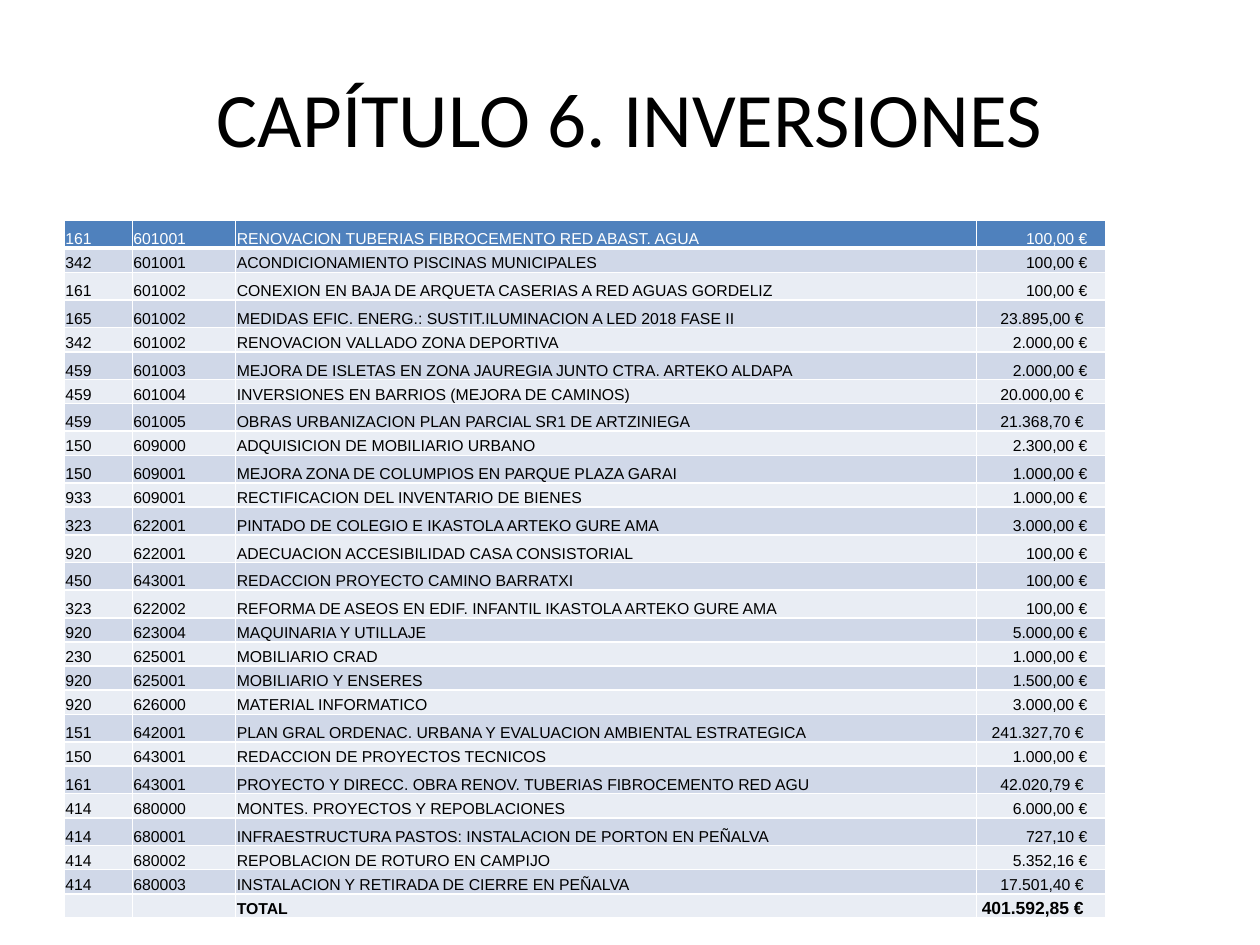
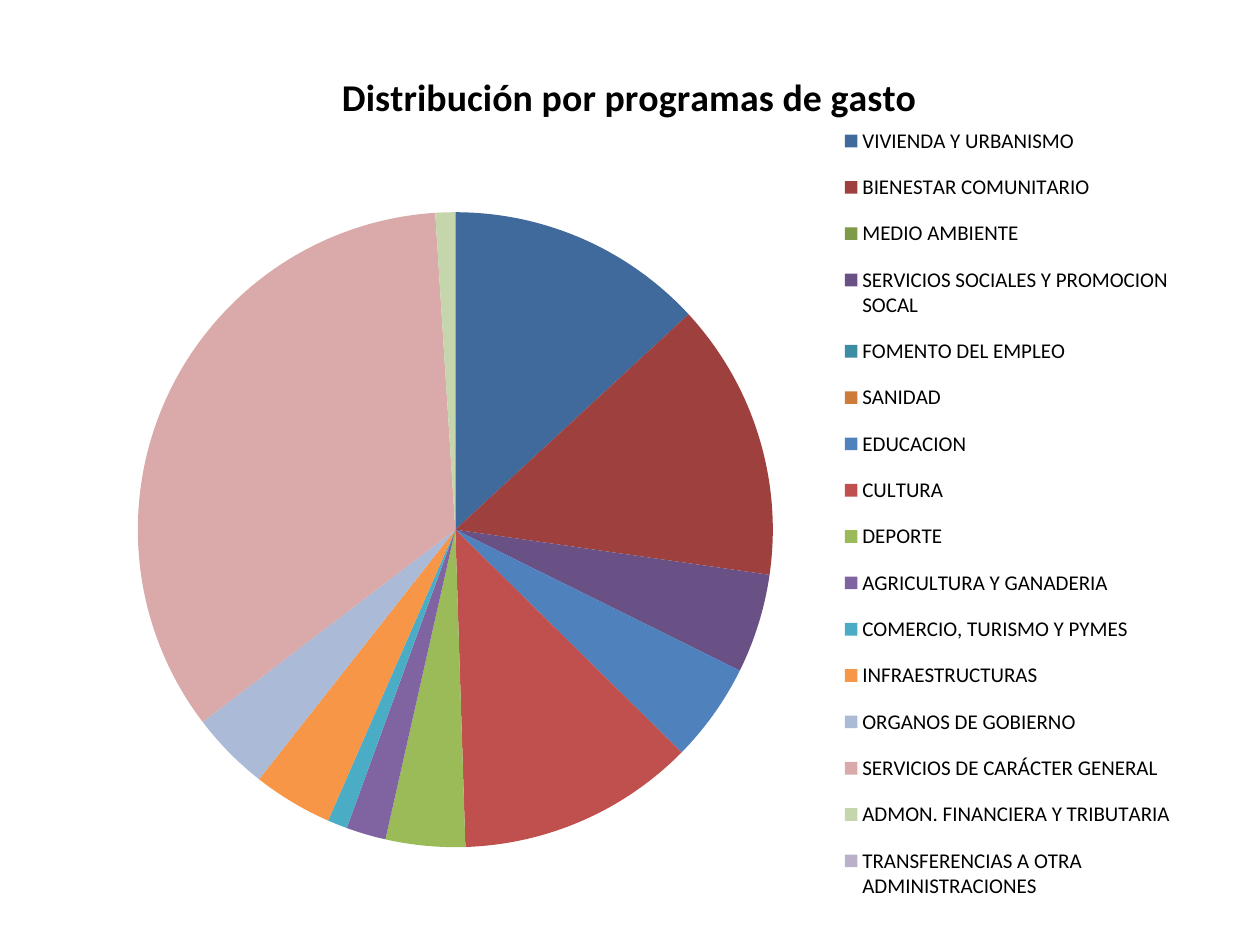
"""Builds a table of municipal investments and a pie of spending by programme."""
from lxml.etree import SubElement
from pptx import Presentation
from pptx.chart.data import CategoryChartData
from pptx.dml.color import RGBColor
from pptx.enum.chart import XL_CHART_TYPE, XL_LEGEND_POSITION
from pptx.enum.text import MSO_ANCHOR, PP_ALIGN
from pptx.oxml import parse_xml
from pptx.oxml.ns import nsdecls, qn
from pptx.util import Inches, Pt

WIDE, HIGH = 10, 7.5
EDGE, SPAN = WIDE * 0.05, WIDE * 0.9
HEAD, BODY = "Calibri", "Arial"
INK, PAPER = "000000", "FFFFFF"
BLUE, BANDS = "4F81BD", ("E9EDF4", "D0D8E8")

TITLE = "CAPÍTULO 6. INVERSIONES"
COLS = (0.54, 0.82, 5.88, 1.03)
DEPTH, TALL = 5.54, 0.22
DEEP = {0, 2, 3, 5, 7, 9, 11, 12, 13, 14, 19, 21, 23}
ROWS = [
    ("161", "601001", "RENOVACION TUBERIAS FIBROCEMENTO RED ABAST. AGUA", "100,00 €"),
    ("342", "601001", "ACONDICIONAMIENTO PISCINAS MUNICIPALES", "100,00 €"),
    ("161", "601002", "CONEXION EN BAJA DE ARQUETA CASERIAS A RED AGUAS GORDELIZ", "100,00 €"),
    ("165", "601002", "MEDIDAS EFIC. ENERG.: SUSTIT.ILUMINACION A LED 2018 FASE II", "23.895,00 €"),
    ("342", "601002", "RENOVACION VALLADO ZONA DEPORTIVA", "2.000,00 €"),
    ("459", "601003", "MEJORA DE ISLETAS EN ZONA JAUREGIA JUNTO CTRA. ARTEKO ALDAPA", "2.000,00 €"),
    ("459", "601004", "INVERSIONES EN BARRIOS (MEJORA DE CAMINOS)", "20.000,00 €"),
    ("459", "601005", "OBRAS URBANIZACION PLAN PARCIAL SR1 DE ARTZINIEGA", "21.368,70 €"),
    ("150", "609000", "ADQUISICION DE MOBILIARIO URBANO", "2.300,00 €"),
    ("150", "609001", "MEJORA ZONA DE COLUMPIOS EN PARQUE PLAZA GARAI", "1.000,00 €"),
    ("933", "609001", "RECTIFICACION DEL INVENTARIO DE BIENES", "1.000,00 €"),
    ("323", "622001", "PINTADO DE COLEGIO E IKASTOLA ARTEKO GURE AMA", "3.000,00 €"),
    ("920", "622001", "ADECUACION ACCESIBILIDAD CASA CONSISTORIAL", "100,00 €"),
    ("450", "643001", "REDACCION PROYECTO CAMINO BARRATXI", "100,00 €"),
    ("323", "622002", "REFORMA DE ASEOS EN EDIF. INFANTIL IKASTOLA ARTEKO GURE AMA", "100,00 €"),
    ("920", "623004", "MAQUINARIA Y UTILLAJE", "5.000,00 €"),
    ("230", "625001", "MOBILIARIO CRAD", "1.000,00 €"),
    ("920", "625001", "MOBILIARIO Y ENSERES", "1.500,00 €"),
    ("920", "626000", "MATERIAL INFORMATICO", "3.000,00 €"),
    ("151", "642001", "PLAN GRAL ORDENAC. URBANA Y EVALUACION AMBIENTAL ESTRATEGICA", "241.327,70 €"),
    ("150", "643001", "REDACCION DE PROYECTOS TECNICOS", "1.000,00 €"),
    ("161", "643001", "PROYECTO Y DIRECC. OBRA RENOV. TUBERIAS FIBROCEMENTO RED AGU", "42.020,79 €"),
    ("414", "680000", "MONTES. PROYECTOS Y REPOBLACIONES", "6.000,00 €"),
    ("414", "680001", "INFRAESTRUCTURA PASTOS: INSTALACION DE PORTON EN PEÑALVA", "727,10 €"),
    ("414", "680002", "REPOBLACION DE ROTURO EN CAMPIJO", "5.352,16 €"),
    ("414", "680003", "INSTALACION Y RETIRADA DE CIERRE EN PEÑALVA", "17.501,40 €"),
    ("", "", "TOTAL", "401.592,85 €"),
]

PIE = "Distribución por programas de gasto"
PARTS = [
    ("VIVIENDA Y URBANISMO", 13, "40699C"),
    ("BIENESTAR COMUNITARIO", 14, "9E413E"),
    ("MEDIO AMBIENTE", 0, "7F9A48"),
    ("SERVICIOS SOCIALES Y PROMOCION SOCAL", 5, "695185"),
    ("FOMENTO DEL EMPLEO", 0, "3C8DA3"),
    ("SANIDAD", 0, "CC7B38"),
    ("EDUCACION", 5, "4F81BD"),
    ("CULTURA", 12, "C0504D"),
    ("DEPORTE", 4, "9BBB59"),
    ("AGRICULTURA Y GANADERIA", 2, "8064A2"),
    ("COMERCIO, TURISMO Y PYMES", 1, "4BACC6"),
    ("INFRAESTRUCTURAS", 4, "F79646"),
    ("ORGANOS DE GOBIERNO", 4, "AABAD7"),
    ("SERVICIOS DE CARÁCTER GENERAL", 34, "D9AAA9"),
    ("ADMON. FINANCIERA Y TRIBUTARIA", 1, "C6D6AC"),
    ("TRANSFERENCIAS A OTRA ADMINISTRACIONES", 0, "BAB0C9"),
]
PULL = 18


def hue(code):
    return RGBColor.from_string(code)


def style(font, size, face, code=INK, bold=False):
    font.size, font.name, font.bold = Pt(size), face, bold
    font.color.rgb = hue(code)


def box(*sides):
    return [Inches(side) for side in sides]


def edge(cell, tag, width):
    line = SubElement(cell._tc.get_or_add_tcPr(), qn(f"a:{tag}"), w=str(Pt(width)))
    fill = SubElement(line, qn("a:solidFill"))
    SubElement(fill, qn("a:srgbClr"), val=PAPER)


def fill_cell(cell, text, row, col):
    last = row == len(ROWS) - 1
    for tag in ("lnL", "lnR", "lnT", "lnB"):
        thick = (row, tag) in ((0, "lnB"), (1, "lnT"))
        edge(cell, tag, 3 if thick else 1)
    cell.fill.solid()
    cell.fill.fore_color.rgb = hue(BANDS[row % 2] if row else BLUE)
    cell.vertical_anchor = MSO_ANCHOR.BOTTOM
    cell.margin_left = cell.margin_top = cell.margin_right = Inches(0.01)
    cell.margin_bottom = 0
    para = cell.text_frame.paragraphs[0]
    if col == 3:
        para.alignment = PP_ALIGN.RIGHT
        cell.margin_right = Inches(0.18 if len(text) > 10 else 0.15)
    if text:
        run = para.add_run()
        run.text = text
        size = 10 if last and col == 3 else 9
        style(run.font, size, BODY, INK if row else PAPER, last)
    else:
        SubElement(para._p, qn("a:endParaRPr"), sz="900")


def add_costs(slide):
    frame = slide.shapes.add_textbox(*box(EDGE, HIGH * 0.04, SPAN, 1.25)).text_frame
    frame.word_wrap = True
    frame.vertical_anchor = MSO_ANCHOR.MIDDLE
    para = frame.paragraphs[0]
    para.alignment = PP_ALIGN.CENTER
    run = para.add_run()
    run.text = TITLE
    style(run.font, 44, HEAD)

    short = (DEPTH - TALL * len(DEEP)) / (len(ROWS) - len(DEEP))
    place = box(0.51, 1.75, sum(COLS), DEPTH)
    grid = slide.shapes.add_table(len(ROWS), len(COLS), *place).table
    for column, width in zip(grid.columns, COLS):
        column.width = Inches(width)
    for i, row in enumerate(ROWS):
        grid.rows[i].height = Inches(TALL if i in DEEP else short)
        for j, text in enumerate(row):
            fill_cell(grid.cell(i, j), text, i, j)


def layout(x, y, w=None, h=None, inner=False):
    target = '<c:layoutTarget val="inner"/>' if inner else ""
    modes = '<c:xMode val="edge"/><c:yMode val="edge"/>'
    sizes = zip("xywh", (x, y, w, h))
    vals = "".join(f'<c:{k} val="{v}"/>' for k, v in sizes if v is not None)
    return parse_xml(f'<c:layout {nsdecls("c")}><c:manualLayout>{target}{modes}'
                     f"{vals}</c:manualLayout></c:layout>")


def arrange(node, after, new):
    for old in node.findall(qn("c:layout")):
        node.remove(old)
    if after:
        node.find(qn(f"c:{after}")).addnext(new)
    else:
        node.insert(0, new)


def add_pie(slide):
    data = CategoryChartData(number_format="0")
    data.categories = [name for name, _, _ in PARTS]
    data.add_series("Series 1", [value for _, value, _ in PARTS])
    place = box(EDGE, 0.36, SPAN, 7.01)
    chart = slide.shapes.add_chart(XL_CHART_TYPE.PIE, *place, data).chart
    style(chart.font, 18, HEAD)

    chart.has_title = True
    run = chart.chart_title.text_frame.paragraphs[0].add_run()
    run.text = PIE
    style(run.font, 21.6, HEAD, bold=True)
    chart.chart_title.include_in_layout = False

    chart.has_legend = True
    key = chart.legend
    key.position = XL_LEGEND_POSITION.RIGHT
    key.include_in_layout = False
    style(key.font, 12, HEAD)

    plot = chart.plots[0]
    plot.vary_by_categories = True
    series = plot.series[0]
    for i, (_, _, code) in enumerate(PARTS):
        fill = series.points[i].format.fill
        fill.solid()
        fill.fore_color.rgb = hue(code)
    burst = parse_xml(f'<c:explosion {nsdecls("c")} val="{PULL}"/>')
    point = series._element.findall(qn("c:dPt"))[-1]
    point.find(qn("c:spPr")).addprevious(burst)

    arrange(chart.chart_title._element, "tx", layout(0.24, 0.02))
    arrange(key._element, "legendPos", layout(0.683, 0.07, 0.3, 0.92))
    area = chart._chartSpace.chart.plotArea
    arrange(area, None, layout(0.066, 0.189, 0.56, 0.719, True))


def main():
    deck = Presentation()
    deck.slide_width, deck.slide_height = box(WIDE, HIGH)
    for build in (add_costs, add_pie):
        build(deck.slides.add_slide(deck.slide_layouts[6]))
    deck.save("out.pptx")


if __name__ == "__main__":
    main()
